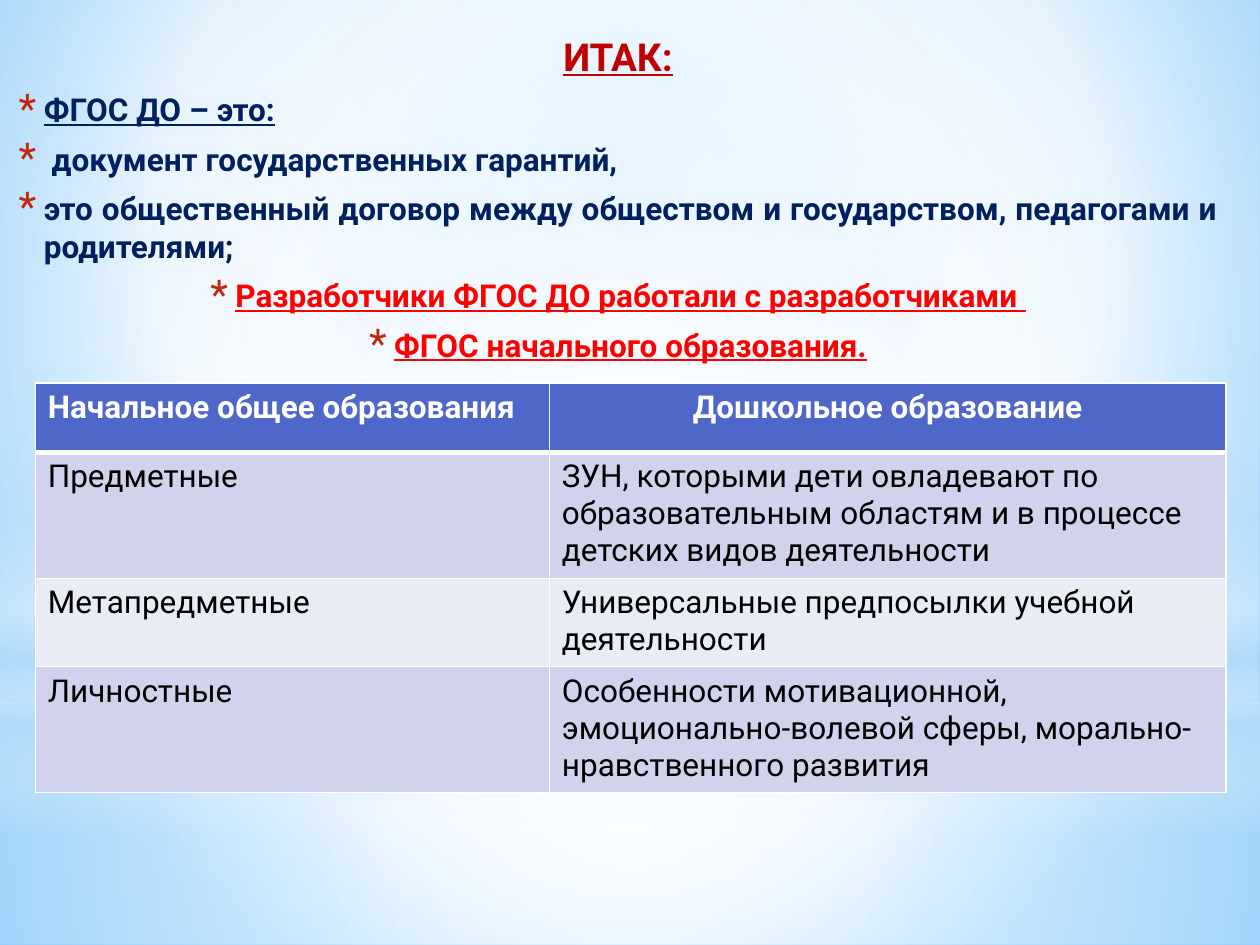
from dataclasses import dataclass

from lxml import etree
from pptx import Presentation
from pptx.dml.color import RGBColor
from pptx.enum.shapes import MSO_SHAPE
from pptx.enum.text import PP_ALIGN
from pptx.oxml.ns import qn
from pptx.util import Inches, Pt

RECT, OVAL = MSO_SHAPE.RECTANGLE, MSO_SHAPE.OVAL
LEFT, CENTER, JUST = PP_ALIGN.LEFT, PP_ALIGN.CENTER, PP_ALIGN.JUSTIFY


@dataclass(frozen=True)
class Theme:
    font: str = "Roboto"
    title: int = 22
    body: int = 18
    dark_red: str = "C00000"
    navy: str = "002060"
    red: str = "FF0000"
    bullet: str = "C3260C"
    head: str = "4E67C8"
    bands: tuple = ("D0D3EB", "E9EBF5")
    white: str = "FFFFFF"
    black: str = "000000"
    sky: str = "B4DCFA"
    light: str = "9ED5FF"
    deep: str = "5BB9FF"


T = Theme()
MID = (50, 50, 50, 50)


def add(parent, tag, **attrs):
    node = etree.SubElement(parent, qn(tag))
    for key, val in attrs.items():
        node.set(key, str(val))
    return node


def grade(root, stops, focus=None):
    """Fill the gradient in root: radial around focus, else top to bottom."""
    grad = root.find(".//" + qn("a:gradFill"))
    for child in list(grad):
        grad.remove(child)
    group = add(grad, "a:gsLst")
    for pos, color, alpha in stops:
        stop = add(group, "a:gs", pos=pos * 1000)
        tint = add(stop, "a:srgbClr", val=color)
        if alpha < 100:
            add(tint, "a:alpha", val=alpha * 1000)
    if focus:
        way = add(grad, "a:path", path="circle")
        sides = {side: pct * 1000 for side, pct in zip("ltrb", focus)}
        add(way, "a:fillToRect", **sides)
    else:
        add(grad, "a:lin", ang=90 * 60000, scaled=0)


def style(para, size, color, bold=False, line=False, align=LEFT):
    para.alignment = align
    font = para.font
    font.name, font.size = T.font, Pt(size)
    font.bold, font.underline = bold, line
    font.color.rgb = RGBColor.from_string(color)


def star(para):
    props = para._p.get_or_add_pPr()
    props.set("marL", str(Inches(0.25)))
    props.set("indent", str(Inches(-0.2)))
    marks = [add(props, "a:buClr"), add(props, "a:buSzPct", val=130000),
             add(props, "a:buFont", typeface=T.font),
             add(props, "a:buChar", char="*")]
    add(marks[0], "a:srgbClr", val=T.bullet)
    # Bullet marks come before the default run properties
    font = props.find(qn("a:defRPr"))
    if font is not None:
        for mark in marks:
            font.addprevious(mark)


def backdrop(slide, wide, high):
    slide.background.fill.gradient()
    grade(slide.element, [(0, T.light, 100), (60, T.white, 100),
                          (100, T.deep, 100)], (20, 10, 20, 60))
    split = 5.58
    layers = [
        (RECT, split, high - split, MID,
         [(0, T.white, 91), (37, T.white, 76), (100, T.sky, 79)]),
        (RECT, 0, split, MID,
         [(0, T.white, 89), (48, T.white, 62), (100, T.sky, 79)]),
        (RECT, 4.12, 2.5, None,
         [(0, T.white, 0), (29, T.white, 30), (45, T.sky, 40),
          (55, T.white, 26), (65, T.sky, 60), (100, T.white, 0)]),
        (OVAL, 1.75, split, MID, [(0, T.white, 100), (56, T.white, 0)]),
    ]
    for kind, top, tall, focus, stops in layers:
        glow = slide.shapes.add_shape(
            kind, 0, Inches(top), Inches(wide), Inches(tall))
        glow.shadow.inherit = False
        glow.line.fill.background()
        glow.fill.gradient()
        grade(glow._element.spPr, stops, focus)


def summary(slide, box):
    frame = slide.shapes.add_textbox(*map(Inches, box)).text_frame
    frame.word_wrap = True
    # Text, colour, underline, alignment
    points = [
        ("ФГОС ДО – это:", T.navy, True, JUST),
        (" документ государственных гарантий, ", T.navy, False, JUST),
        ("это общественный договор между обществом и государством, "
         "педагогами и родителями;", T.navy, False, JUST),
        ("Разработчики ФГОС ДО работали с разработчиками ",
         T.red, True, CENTER),
        ("ФГОС начального образования.", T.red, True, CENTER),
    ]
    title = frame.paragraphs[0]
    title.text = "ИТАК:"
    style(title, T.title, T.dark_red, True, True, CENTER)
    title._p.get_or_add_pPr().set("marL", str(Inches(0.05)))
    title.space_before, title.space_after = Pt(T.title * 0.2), Pt(3)
    for text, color, line, align in points:
        para = frame.add_paragraph()
        para.text = text
        style(para, T.body, color, True, line, align)
        para.space_before, para.space_after = Pt(T.body * 0.2), Pt(3)
        star(para)


def border(cell, base):
    props = cell._tc.get_or_add_tcPr()
    for side, width in zip("LRTB", (1, 1, 1, base)):
        edge = add(props, f"a:ln{side}", w=Pt(width))
        add(add(edge, "a:solidFill"), "a:srgbClr", val=T.white)


def results(slide, box):
    rows = [
        ("Начальное общее образования", "Дошкольное образование"),
        ("Предметные", "ЗУН, которыми дети овладевают по образовательным "
         "областям и в процессе детских видов деятельности"),
        ("Метапредметные", "Универсальные предпосылки учебной деятельности"),
        ("Личностные", "Особенности мотивационной, эмоционально-волевой "
         "сферы, морально-нравственного развития"),
    ]
    table = slide.shapes.add_table(len(rows), 2, *map(Inches, box)).table
    for col, width in zip(table.columns, (4.08, 5.37)):
        col.width = Inches(width)
    for row, tall in zip(table.rows, (0.55, 0.98, 0.69, 0.98)):
        row.height = Inches(tall)
    for r, texts in enumerate(rows):
        head = r == 0
        for c, text in enumerate(texts):
            cell = table.cell(r, c)
            cell.text = text
            style(cell.text_frame.paragraphs[0], T.body,
                  T.white if head else T.black, bold=head,
                  align=CENTER if head and c else LEFT)
            border(cell, 3 if head else 1)
            cell.fill.solid()
            shade = T.head if head else T.bands[(r - 1) % 2]
            cell.fill.fore_color.rgb = RGBColor.from_string(shade)


def main():
    wide, high = 10, 7.5
    deck = Presentation()
    deck.slide_width, deck.slide_height = Inches(wide), Inches(high)
    slide = deck.slides.add_slide(deck.slide_layouts[6])
    backdrop(slide, wide, high)
    summary(slide, (0, 0.21, 9.76, 7.17))
    results(slide, (0.28, 3.04, 9.45, 3.2))
    deck.save("out.pptx")


if __name__ == "__main__":
    main()
